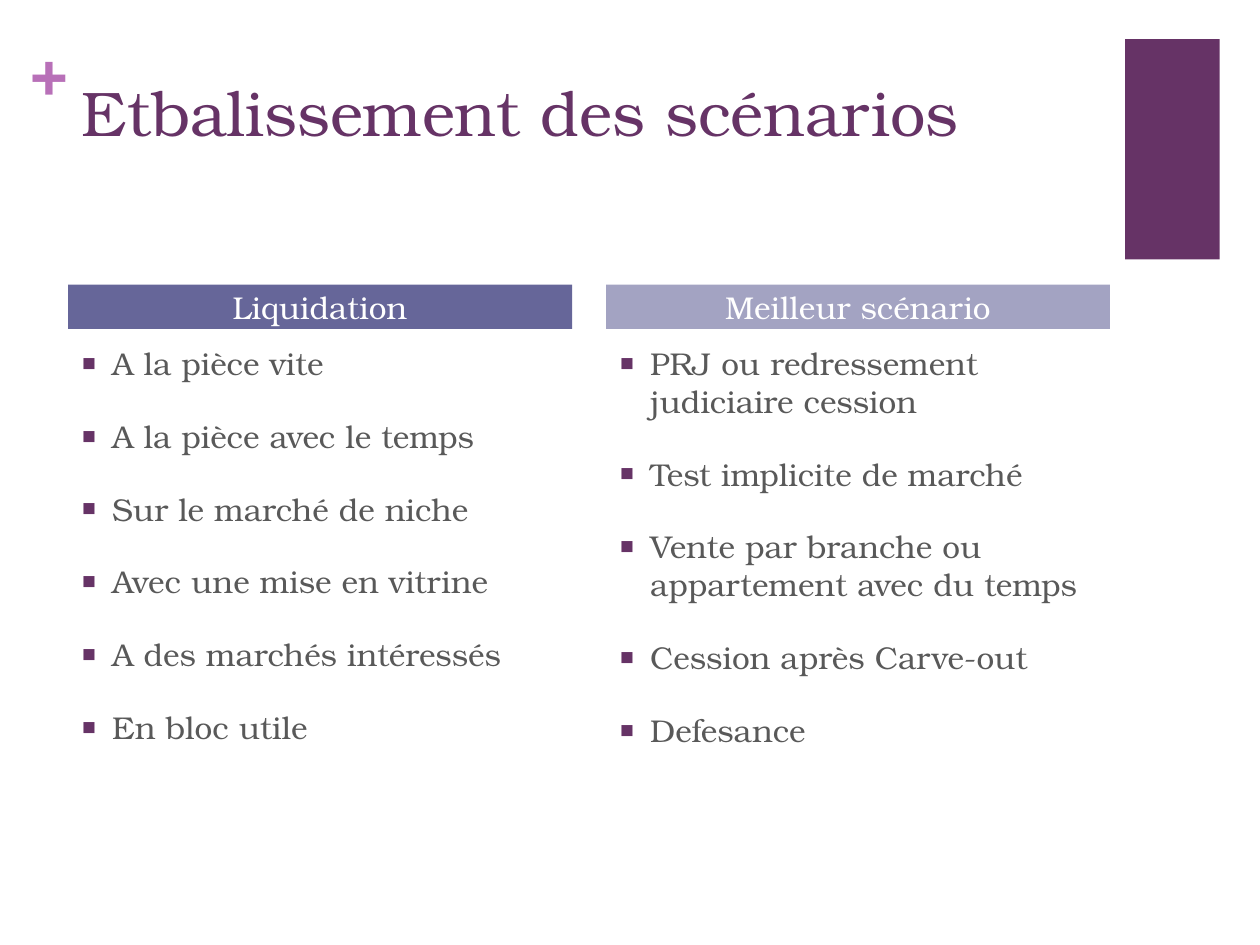
"""Build the slide comparing the liquidation scenarios with the best scenario."""
import pptx
import pptx.dml.color
import pptx.enum.shapes
import pptx.enum.text
import pptx.oxml
import pptx.oxml.ns
import pptx.util

TITLE = "Etbalissement des scénarios"
SCENARIOS = [
    ("Liquidation", "666699", [
        "A la pièce vite",
        "A la pièce avec le temps",
        "Sur le marché de niche",
        "Avec une mise en vitrine",
        "A des marchés intéressés",
        "En bloc utile",
    ]),
    ("Meilleur scénario", "A3A3C2", [
        "PRJ ou redressement judiciaire cession",
        "Test implicite de marché",
        "Vente par branche ou appartement avec du temps",
        "Cession après Carve-out",
        "Defesance",
    ]),
]
FONT = "TeX Gyre Bonum"
PLUM, ORCHID, GREY, WHITE = "663366", "B870B8", "595959", "FFFFFF"
LEFT, COLUMN_WIDTH, GAP = 0.54, 4, 0.27
HEADING_TOP, HEADING_HEIGHT = 2.26, 0.35
LIST_TOP, LIST_HEIGHT = 2.68, 4.02
ALIGN = pptx.enum.text.PP_ALIGN
ANCHOR = pptx.enum.text.MSO_ANCHOR
AUTO_SIZE = pptx.enum.text.MSO_AUTO_SIZE


def rgb(value):
    return pptx.dml.color.RGBColor.from_string(value)


def paint(part, color):
    part.fill.solid()
    part.fill.fore_color.rgb = rgb(color)


def place(part, *box):
    part.left, part.top, part.width, part.height = map(pptx.util.Inches, box)


def prepare(part, anchor, auto_size=AUTO_SIZE.NONE, wrap=True):
    frame = part.text_frame
    frame.word_wrap = wrap
    frame.auto_size = auto_size
    frame.vertical_anchor = anchor
    return frame


def write(paragraph, words, size, color, align=ALIGN.LEFT, before=0, bold=False):
    paragraph.alignment = align
    paragraph.space_before = pptx.util.Pt(before)
    run = paragraph.add_run()
    run.text = words
    run.font.name = FONT
    run.font.size = pptx.util.Pt(size)
    run.font.bold = bold
    run.font.color.rgb = rgb(color)


def add_bullet(paragraph):
    properties = paragraph._p.get_or_add_pPr()
    indent = pptx.util.Inches(0.25)
    properties.set("marL", str(indent))
    properties.set("indent", str(-indent))
    namespace = pptx.oxml.ns.nsdecls("a")
    for tag in (
        f'<a:buClr {namespace}><a:srgbClr val="{PLUM}"/></a:buClr>',
        f'<a:buSzPct {namespace} val="75000"/>',
        f'<a:buFont {namespace} typeface="{FONT}"/>',
        f'<a:buChar {namespace} char="■"/>',
    ):
        properties.append(pptx.oxml.parse_xml(tag))


def add_decoration(slide):
    band = slide.shapes.add_shape(
        pptx.enum.shapes.MSO_SHAPE.RECTANGLE,
        *map(pptx.util.Inches, (8.93, 0.31, 0.75, 1.75)))
    band.shadow.inherit = False
    band.line.fill.background()
    paint(band, PLUM)
    plus = slide.shapes.add_textbox(*map(pptx.util.Inches, (0.24, 0.25, 0.28, 0.61)))
    frame = prepare(plus, ANCHOR.TOP, AUTO_SIZE.SHAPE_TO_FIT_TEXT, wrap=False)
    frame.margin_left = frame.margin_right = frame.margin_top = frame.margin_bottom = 0
    write(frame.paragraphs[0], "+", 36, ORCHID, bold=True)


def fill_scenario(heading, options, column, name, color, items):
    left = LEFT + column * (COLUMN_WIDTH + GAP)
    place(heading, left, HEADING_TOP, COLUMN_WIDTH, HEADING_HEIGHT)
    paint(heading, color)
    frame = prepare(heading, ANCHOR.MIDDLE)
    frame.margin_top = frame.margin_bottom = 0
    write(frame.paragraphs[0], name, 18, WHITE, ALIGN.CENTER, before=20)

    place(options, left, LIST_TOP, COLUMN_WIDTH, LIST_HEIGHT)
    frame = prepare(options, ANCHOR.TOP)
    for row, item in enumerate(items):
        paragraph = frame.add_paragraph() if row else frame.paragraphs[0]
        write(paragraph, item, 18, GREY, before=20)
        add_bullet(paragraph)


def main():
    deck = pptx.Presentation()
    deck.slide_width, deck.slide_height = pptx.util.Inches(10), pptx.util.Inches(7.5)
    slide = deck.slides.add_slide(deck.slide_layouts.get_by_name("Comparison"))
    add_decoration(slide)
    title = slide.shapes.title
    place(title, 0.55, 0.53, 8.26, 1.22)
    write(prepare(title, ANCHOR.TOP).paragraphs[0], TITLE, 36, PLUM)
    _, *bodies = slide.placeholders
    for column, scenario in enumerate(SCENARIOS):
        heading, options = bodies[2 * column:2 * column + 2]
        fill_scenario(heading, options, column, *scenario)
    deck.save("out.pptx")


if __name__ == "__main__":
    main()
